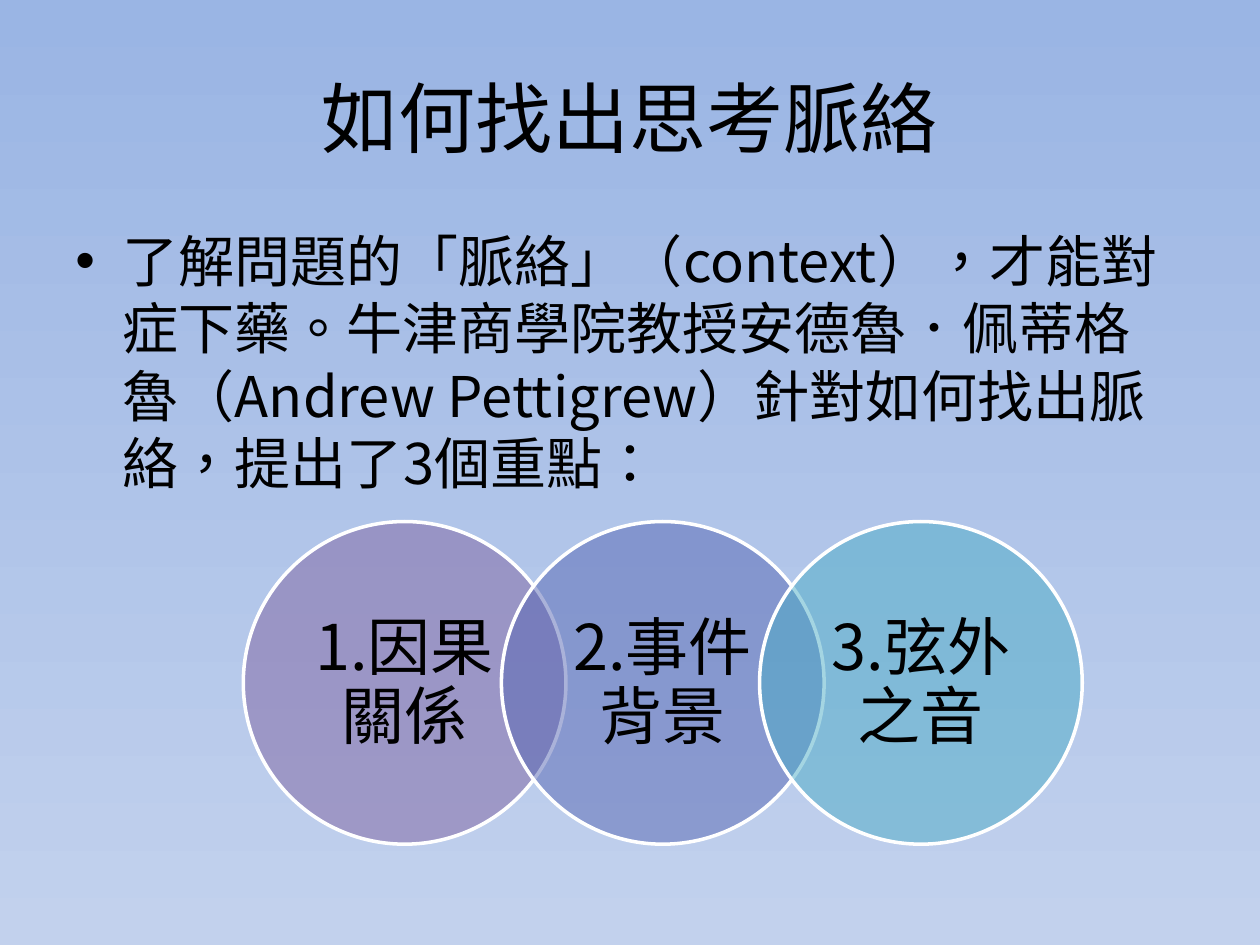
from dataclasses import dataclass

from lxml.etree import SubElement
from pptx import Presentation
from pptx.dml.color import RGBColor as Rgb
from pptx.enum.shapes import MSO_SHAPE as Shape
from pptx.enum.text import MSO_ANCHOR as Anchor, PP_ALIGN as Align
from pptx.oxml.ns import qn
from pptx.util import Pt


@dataclass(frozen=True)
class Theme:
    """Colours, font and type sizes of the slide."""
    font: str = "Noto Sans CJK SC"
    language: str = "zh-TW"
    ink: str = "000000"
    outline: str = "FFFFFF"
    sky: tuple = ("9AB5E4", "C2D1ED")
    circles: tuple = ("8064A2", "5767B4", "4BACC6")
    title: int = 44
    body: int = 32
    label: int = 36


THEME = Theme()
TITLE = "如何找出思考脈絡"
INTRO = ("了解問題的「脈絡」（context），才能對症下藥。牛津商學院教授安德魯．佩蒂格魯"
         "（Andrew Pettigrew）針對如何找出脈絡，提出了3個重點：")
POINTS = ("1.因果關係", "2.事件背景", "3.弦外之音")


def style(paragraph, size, align):
    """Set the alignment, language and Latin and East Asian font of a paragraph."""
    paragraph.alignment = align
    font = paragraph.font
    font.size = Pt(size)
    font.name = THEME.font
    font.color.rgb = Rgb.from_string(THEME.ink)
    properties = paragraph._p.pPr.find(qn("a:defRPr"))
    properties.set("lang", THEME.language)
    SubElement(properties, qn("a:ea"), typeface=THEME.font)
    for run in paragraph.runs:
        run._r.get_or_add_rPr().set("lang", THEME.language)


def paint_background(slide):
    """Fill the slide with a gradient from top to bottom."""
    fill = slide.background.fill
    fill.gradient()
    fill.gradient_angle = 270
    for stop, colour in zip(fill.gradient_stops, THEME.sky):
        stop.color.rgb = Rgb.from_string(colour)


def place_title(slide, left, top, width, height):
    """Move and format the title placeholder."""
    title = slide.shapes.title
    title.left, title.top = Pt(left), Pt(top)
    title.width, title.height = Pt(width), Pt(height)
    frame = title.text_frame
    frame.text = TITLE
    frame.vertical_anchor = Anchor.MIDDLE
    style(frame.paragraphs[0], THEME.title, Align.CENTER)


def place_intro(slide, left, top, width, height):
    """Add the bulleted introduction."""
    intro = slide.shapes.add_textbox(Pt(left), Pt(top), Pt(width), Pt(height))
    frame = intro.text_frame
    frame.word_wrap = True
    frame.margin_right = Pt(13)
    paragraph = frame.paragraphs[0]
    paragraph.text = INTRO
    paragraph.line_spacing = Pt(38.4)
    properties = paragraph._p.get_or_add_pPr()
    properties.set("marL", str(Pt(27)))
    properties.set("indent", str(Pt(-27)))
    SubElement(properties, qn("a:buFont"), typeface="Arial")
    SubElement(properties, qn("a:buChar"), char="•")
    style(paragraph, THEME.body, Align.LEFT)


def place_circles(slide, left, top, diameter):
    """Add a row of translucent circles, each overlapping the last by a fifth."""
    for index, (point, colour) in enumerate(zip(POINTS, THEME.circles)):
        circle = slide.shapes.add_shape(
            Shape.OVAL, Pt(left + index * diameter * 0.8), Pt(top),
            Pt(diameter), Pt(diameter))
        circle.shadow.inherit = False
        circle.fill.solid()
        circle.fill.fore_color.rgb = Rgb.from_string(colour)
        solid = circle._element.spPr.find(qn("a:solidFill"))
        SubElement(solid[0], qn("a:alpha"), val="50000")
        circle.line.color.rgb = Rgb.from_string(THEME.outline)
        circle.line.width = Pt(2)

        frame = circle.text_frame
        frame.word_wrap = True
        frame.vertical_anchor = Anchor.MIDDLE
        frame.margin_left = frame.margin_right = Pt(10.15)
        paragraph = frame.paragraphs[0]
        paragraph.text = point
        paragraph.line_spacing = Pt(39.4)
        style(paragraph, THEME.label, Align.CENTER)


def main():
    """Build and save the slide."""
    deck = Presentation()
    deck.slide_width, deck.slide_height = Pt(720), Pt(540)
    slide = deck.slides.add_slide(deck.slide_layouts[5])
    paint_background(slide)
    place_title(slide, 36, 21.6, 648, 90)
    place_intro(slide, 36, 126, 648, 356.4)
    place_circles(slide, 139, 298, 184.4)
    deck.save("out.pptx")


if __name__ == "__main__":
    main()
